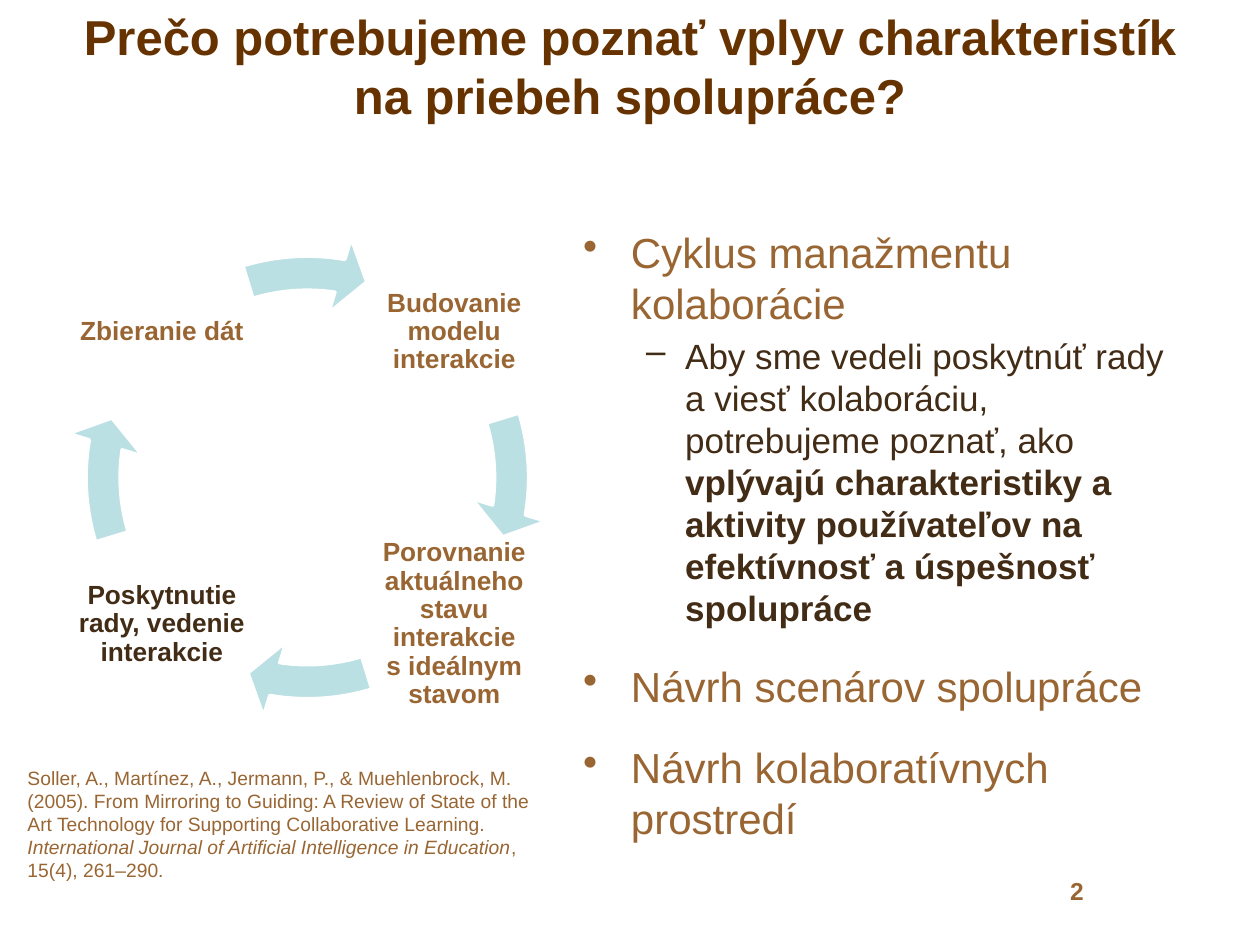
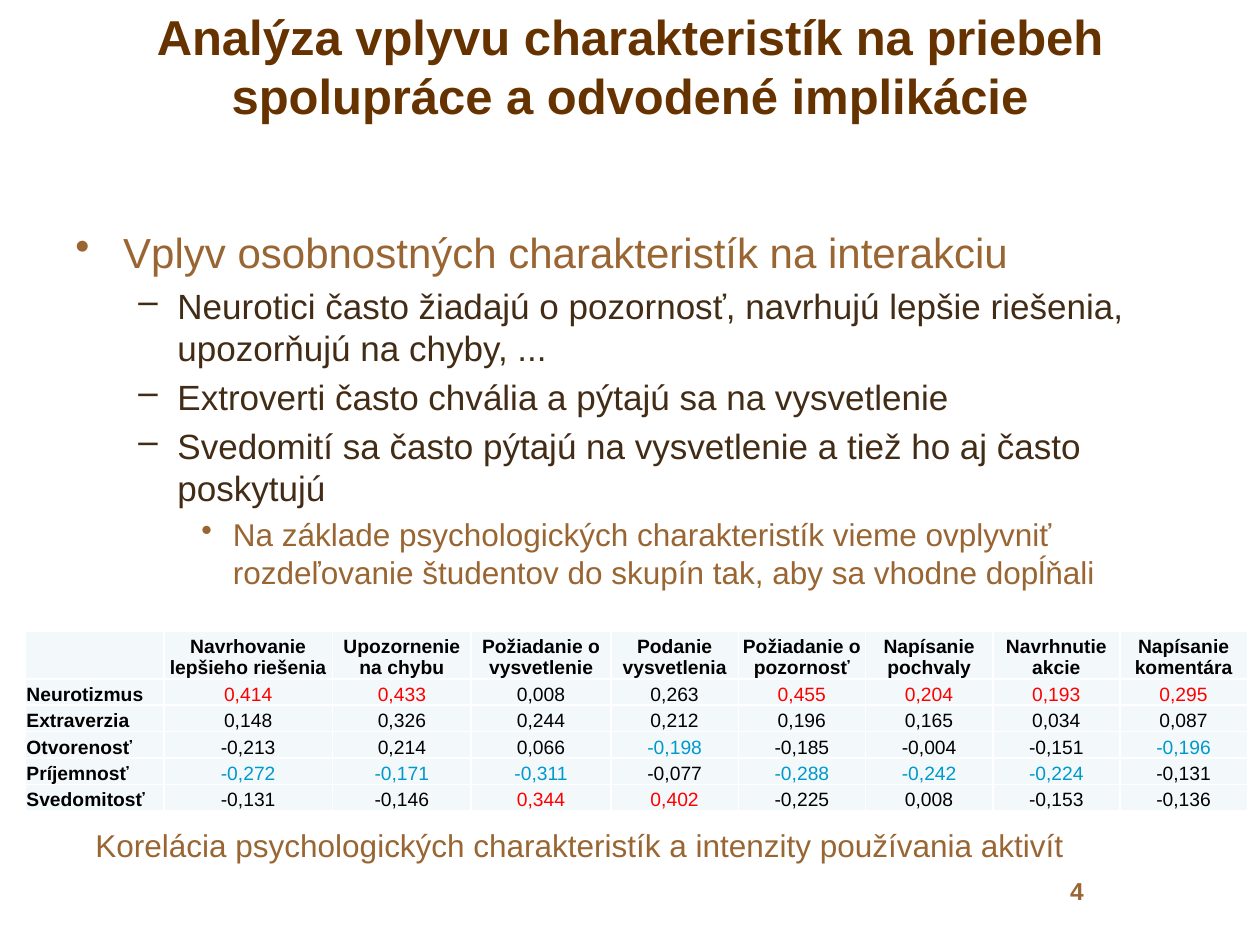
"""Two slides on how personal characteristics influence collaboration."""
from lxml import etree
from pptx import Presentation
from pptx.dml.color import RGBColor
from pptx.enum import shapes, text
from pptx.oxml import ns
from pptx.util import Inches, Pt

FONT = "Arial"
TITLE = RGBColor(0x66, 0x33, 0x00)
BROWN = RGBColor(0x99, 0x66, 0x33)
DARK = RGBColor(0x42, 0x2C, 0x16)
TEAL = RGBColor(0xBB, 0xE0, 0xE3)
PALE = RGBColor(0xF3, 0xF9, 0xFA)
WHITE = RGBColor(0xFF, 0xFF, 0xFF)
BLACK = RGBColor(0, 0, 0)
RED = RGBColor(0xFF, 0, 0)
BLUE = RGBColor(0x00, 0x99, 0xCC)
LEFT, CENTER, RIGHT = text.PP_ALIGN.LEFT, text.PP_ALIGN.CENTER, text.PP_ALIGN.RIGHT
MIDDLE = text.MSO_ANCHOR.MIDDLE

LEVELS = [
    ("•", 0.38, 0.38, 18, 24, BROWN),
    ("–", 0.81, 0.31, 4, 20, DARK),
    ("•", 1.25, 0.25, 4, 18, BROWN),
]


def add_text(page, at, words, size, color, bold=False, align=LEFT, anchor=text.MSO_ANCHOR.TOP):
    """Add a one-paragraph box; the part between bars is italic."""
    box = page.shapes.add_textbox(*map(Inches, at))
    frame = box.text_frame
    frame.word_wrap = True
    frame.vertical_anchor = anchor
    para = frame.paragraphs[0]
    para.alignment = align
    font = para.font
    font.name, font.size, font.bold = FONT, Pt(size), bold
    font.color.rgb = color
    for index, part in enumerate(words.split("|")):
        span = para.add_run()
        span.text = part
        if index % 2:
            span.font.italic = True
    return frame


def add_bullets(page, at, items):
    """Add a bulleted list; the part between bars is bold."""
    frame = page.shapes.add_textbox(*map(Inches, at)).text_frame
    frame.word_wrap = True
    for number, (level, words) in enumerate(items):
        mark, margin, hanging, before, size, color = LEVELS[level]
        para = frame.add_paragraph() if number else frame.paragraphs[0]
        para.level = level
        props = para._p.get_or_add_pPr()
        props.set("marL", str(Inches(margin)))
        props.set("indent", str(-Inches(hanging)))
        etree.SubElement(props, ns.qn("a:buChar"), char=mark)
        if number:
            para.space_before = Pt(before)
        para.font.name, para.font.size = FONT, Pt(size)
        para.font.color.rgb = color
        for index, part in enumerate(words.split("|")):
            span = para.add_run()
            span.text = part
            if index % 2:
                span.font.bold = True


deck = Presentation()
deck.slide_width, deck.slide_height = Inches(10), Inches(7.5)

pages = []
for number, heading in [
    ("2", "Prečo potrebujeme poznať vplyv charakteristík na priebeh spolupráce?"),
    ("4", "Analýza vplyvu charakteristík na priebeh spolupráce a odvodené implikácie"),
]:
    page = deck.slides.add_slide(deck.slide_layouts[6])
    add_text(page, (8.1, 6.9, 0.6, 0.34), number, 14, BROWN, True, RIGHT)
    add_text(page, (0.5, 0.05, 9, 0.94), heading, 28, TITLE, True, CENTER, MIDDLE)
    pages.append(page)
cycle_page, analysis_page = pages

cycle_steps = [
    (2.92, 1.95, "Budovanie modelu interakcie", BROWN),
    (2.92, 4.27, "Porovnanie aktuálneho stavu interakcie\vs ideálnym stavom", BROWN),
    (0.6, 4.27, "Poskytnutie rady, vedenie interakcie", DARK),
    (0.6, 1.95, "Zbieranie dát", BROWN),
]
QUARTER, FULL = 54, 216
for turn, (left, top, label, color) in enumerate(cycle_steps):
    frame = add_text(cycle_page, (left, top, 1.37, 1.37), "", 15, color, True, CENTER, MIDDLE)
    frame.margin_left = frame.margin_right = frame.margin_top = frame.margin_bottom = Inches(0.02)
    frame.paragraphs[0].text = label
    frame.paragraphs[0].line_spacing = 0.9
    arrow = cycle_page.shapes.add_shape(
        shapes.MSO_SHAPE.CIRCULAR_ARROW, Inches(0.51), Inches(1.86), Inches(3.86), Inches(3.86))
    arrow.shadow.inherit = False
    arrow.fill.solid()
    arrow.fill.fore_color.rgb = TEAL
    arrow.line.color.rgb = WHITE
    arrow.line.width = Pt(2)
    angles = (5.5 + QUARTER * turn, (205.85 + QUARTER * turn) % FULL)
    for index, value in enumerate((0.07, 4.65, *angles, 0.08)):
        arrow.adjustments[index] = value

add_bullets(cycle_page, (4.53, 1.75, 4.97, 5.07), [
    (0, "Cyklus manažmentu kolaborácie"),
    (1, "Aby sme vedeli poskytnúť rady a viesť kolaboráciu, potrebujeme poznať, ako "
        "|vplývajú charakteristiky a aktivity používateľov na efektívnosť a úspešnosť spolupráce"),
    (0, "Návrh scenárov spolupráce"),
    (0, "Návrh kolaboratívnych prostredí"),
])
add_text(cycle_page, (0.12, 6.03, 4.33, 1.03),
         "Soller, A., Martínez, A., Jermann, P., & Muehlenbrock, M. (2005). From Mirroring to "
         "Guiding: A Review of State of the Art Technology for Supporting Collaborative Learning. "
         "|International Journal of Artificial Intelligence in Education|, 15(4), 261–290.",
         11, BROWN)

add_bullets(analysis_page, (0.5, 1.75, 9, 5.07), [
    (0, "Vplyv osobnostných charakteristík na interakciu"),
    (1, "Neurotici často žiadajú o pozornosť, navrhujú lepšie riešenia, upozorňujú na chyby, ..."),
    (1, "Extroverti často chvália a pýtajú sa na vysvetlenie"),
    (1, "Svedomití sa často pýtajú na vysvetlenie a tiež ho aj často poskytujú"),
    (2, "Na základe psychologických charakteristík vieme ovplyvniť rozdeľovanie študentov "
        "do skupín tak, aby sa vhodne dopĺňali"),
])

correlations = [
    ["", "Navrhovanie lepšieho riešenia", "Upozornenie na chybu", "Požiadanie o vysvetlenie",
     "Podanie vysvetlenia", "Požiadanie o pozornosť", "Napísanie pochvaly",
     "Navrhnutie akcie", "Napísanie komentára"],
    ["Neurotizmus"] + "0,414* 0,433* 0,008 0,263 0,455* 0,204* 0,193* 0,295*".split(),
    ["Extraverzia"] + "0,148 0,326 0,244 0,212 0,196 0,165 0,034 0,087".split(),
    ["Otvorenosť"] + "-0,213 0,214 0,066 -0,198* -0,185 -0,004 -0,151 -0,196*".split(),
    ["Príjemnosť"] + "-0,272* -0,171* -0,311* -0,077 -0,288* -0,242* -0,224* -0,131".split(),
    ["Svedomitosť"] + "-0,131 -0,146 0,344* 0,402* -0,225 0,008 -0,153 -0,136".split(),
]
column_widths = [1.1, 1.34, 1.1, 1.11] + [1.01] * 5
table = analysis_page.shapes.add_table(
    len(correlations), len(column_widths),
    Inches(0.2), Inches(5.01), Inches(9.69), Inches(1.4)).table
table.first_row = table.horz_banding = False
for column, width in zip(table.columns, column_widths):
    column.width = Inches(width)
for row_index, values in enumerate(correlations):
    table.rows[row_index].height = Inches(0.21 if row_index else 0.35)
    for column_index, value in enumerate(values):
        cell = table.cell(row_index, column_index)
        cell.margin_left = cell.margin_right = cell.margin_top = Inches(0.01)
        cell.margin_bottom = 0
        cell.vertical_anchor = text.MSO_ANCHOR.BOTTOM
        for side in ("lnL", "lnR", "lnT", "lnB"):
            border = etree.SubElement(cell._tc.get_or_add_tcPr(), ns.qn("a:" + side), w=str(Pt(1)))
            paint = etree.SubElement(border, ns.qn("a:solidFill"))
            etree.SubElement(paint, ns.qn("a:srgbClr"), val=str(WHITE))
        cell.fill.solid()
        cell.fill.fore_color.rgb = PALE
        para = cell.text_frame.paragraphs[0]
        para.text = value.rstrip("*")
        para.alignment = CENTER if column_index else LEFT
        para.font.name, para.font.size = FONT, Pt(11)
        para.font.bold = row_index == 0 or column_index == 0
        significant = BLUE if value.startswith("-") else RED
        para.font.color.rgb = significant if value.endswith("*") else BLACK

add_text(analysis_page, (0.66, 6.51, 8.1, 0.4),
         "Korelácia psychologických charakteristík a intenzity používania aktivít", 18, BROWN)

deck.save("out.pptx")
